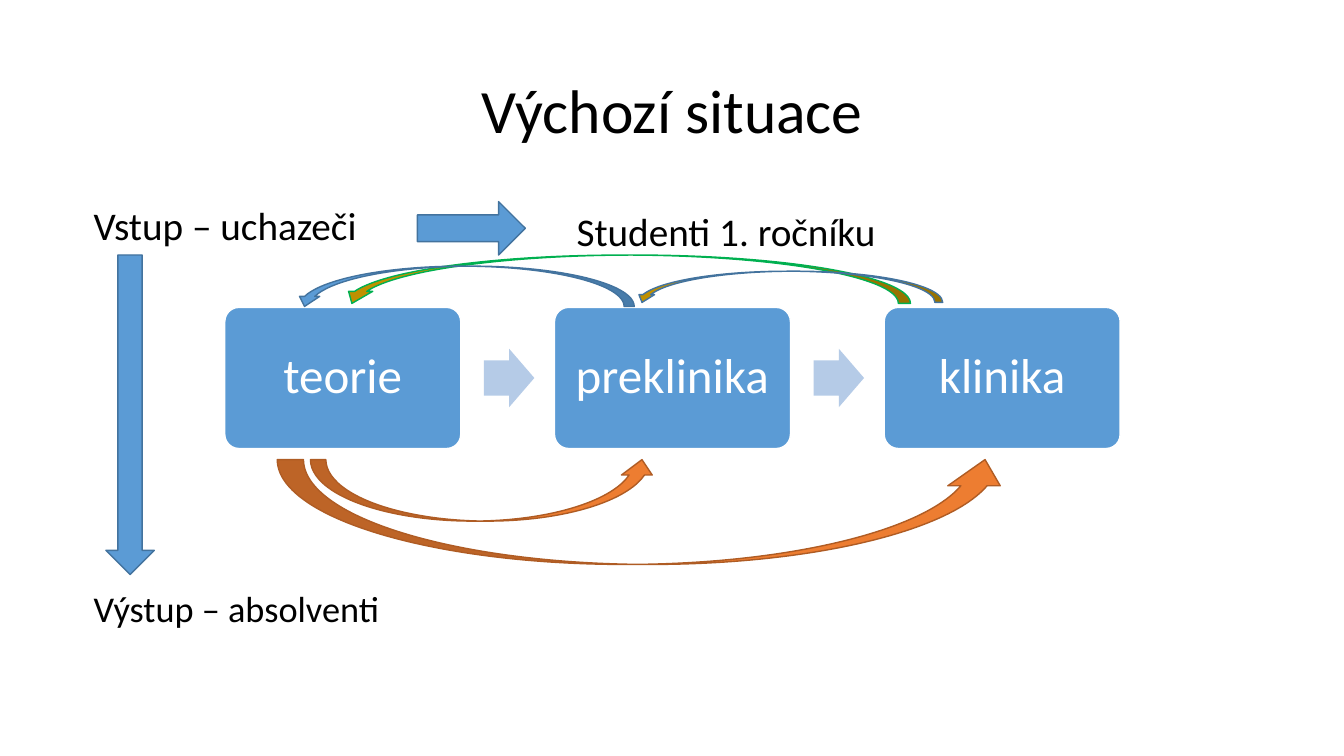
from pptx import Presentation
from pptx.dml.color import RGBColor
from pptx.enum.shapes import MSO_SHAPE as SHAPE
from pptx.enum.text import MSO_ANCHOR as ANCHOR, PP_ALIGN as ALIGN
from pptx.util import Inches, Pt

COLORS = {
    "black": "000000", "white": "FFFFFF", "blue": "5B9BD5", "blue_line": "43739E",
    "pale_blue": "B5CBE7", "orange": "ED7D31", "orange_line": "AF5C24",
    "gold": "BF9000", "green": "00B050",
}

prs = Presentation()
prs.slide_width, prs.slide_height = Inches(13.33), Inches(7.5)
s = prs.slides.add_slide(prs.slide_layouts[6])


def add_shape(kind, box, fill, line=None, rotation=0):
    sp = s.shapes.add_shape(kind, *[Inches(v) for v in box])
    sp.shadow.inherit = False
    sp.rotation = rotation
    sp.fill.solid()
    sp.fill.fore_color.rgb = RGBColor.from_string(COLORS[fill])
    if line:
        sp.line.color.rgb = RGBColor.from_string(COLORS[line])
        sp.line.width = Pt(1)
    else:
        sp.line.fill.background()
    return sp


def write(sp, text, size, color="black", align=ALIGN.LEFT, anchor=ANCHOR.TOP, before=0):
    tf = sp.text_frame
    tf.word_wrap = True
    tf.vertical_anchor = anchor
    p = tf.paragraphs[0]
    p.alignment = align
    p.line_spacing = 0.9
    p.space_before = Pt(before)
    r = p.add_run()
    r.text = text
    r.font.name = "Calibri"
    r.font.size = Pt(size)
    r.font.color.rgb = RGBColor.from_string(COLORS[color])


# Title and labels
title = s.shapes.add_textbox(Inches(0.92), Inches(0.4), Inches(11.5), Inches(1.45))
write(title, "Výchozí situace", 44, align=ALIGN.CENTER, anchor=ANCHOR.MIDDLE)

for text, size, box in [
    ("Vstup – uchazeči", 28, (0.83, 2, 3.08, 0.66)),
    ("Studenti 1. ročníku", 28, (5.62, 2.06, 3.18, 0.6)),
    ("Výstup – absolventi", 25.9, (0.83, 5.82, 3.08, 0.66)),
]:
    label = s.shapes.add_textbox(*[Inches(v) for v in box])
    write(label, text, size, before=10)

# Three study stages with arrows between them
STAGES = ["teorie", "preklinika", "klinika"]
STAGE_LEFT, STAGE_STEP = 2.23, 3.27
for i, name in enumerate(STAGES):
    left = STAGE_LEFT + i * STAGE_STEP
    stage = add_shape(SHAPE.ROUNDED_RECTANGLE, (left, 3.05, 2.34, 1.4), "blue", "white")
    stage.adjustments[0] = 0.1
    tf = stage.text_frame
    tf.margin_left = tf.margin_right = tf.margin_top = tf.margin_bottom = Inches(0.15)
    write(stage, name, 35, "white", ALIGN.CENTER, ANCHOR.MIDDLE)
    if i < len(STAGES) - 1:
        arrow = add_shape(SHAPE.RIGHT_ARROW, (left + 2.57, 3.46, 0.5, 0.58), "pale_blue")
        arrow.adjustments[0] = 0.6

# Entry and exit arrows
add_shape(SHAPE.RIGHT_ARROW, (4.14, 2, 1.07, 0.53), "blue", "blue_line")
add_shape(SHAPE.DOWN_ARROW, (1.05, 2.53, 0.48, 3.17), "blue", "blue_line")

# Curved links: forward below the stages, backward above them
for box, fill, line, rotation in [
    ((3.08, 4.56, 3.44, 0.61), "orange", "orange_line", 0),
    ((2.75, 4.56, 7.28, 1.04), "orange", "orange_line", 0),
    ((3.37, 2.53, 5.66, 0.48), "gold", "green", 180),
    ((6.29, 2.69, 3.06, 0.31), "gold", "blue_line", 180),
    ((2.92, 2.64, 3.37, 0.4), "blue", "blue_line", 180),
]:
    add_shape(SHAPE.CURVED_UP_ARROW, box, fill, line, rotation)

prs.save("out.pptx")
